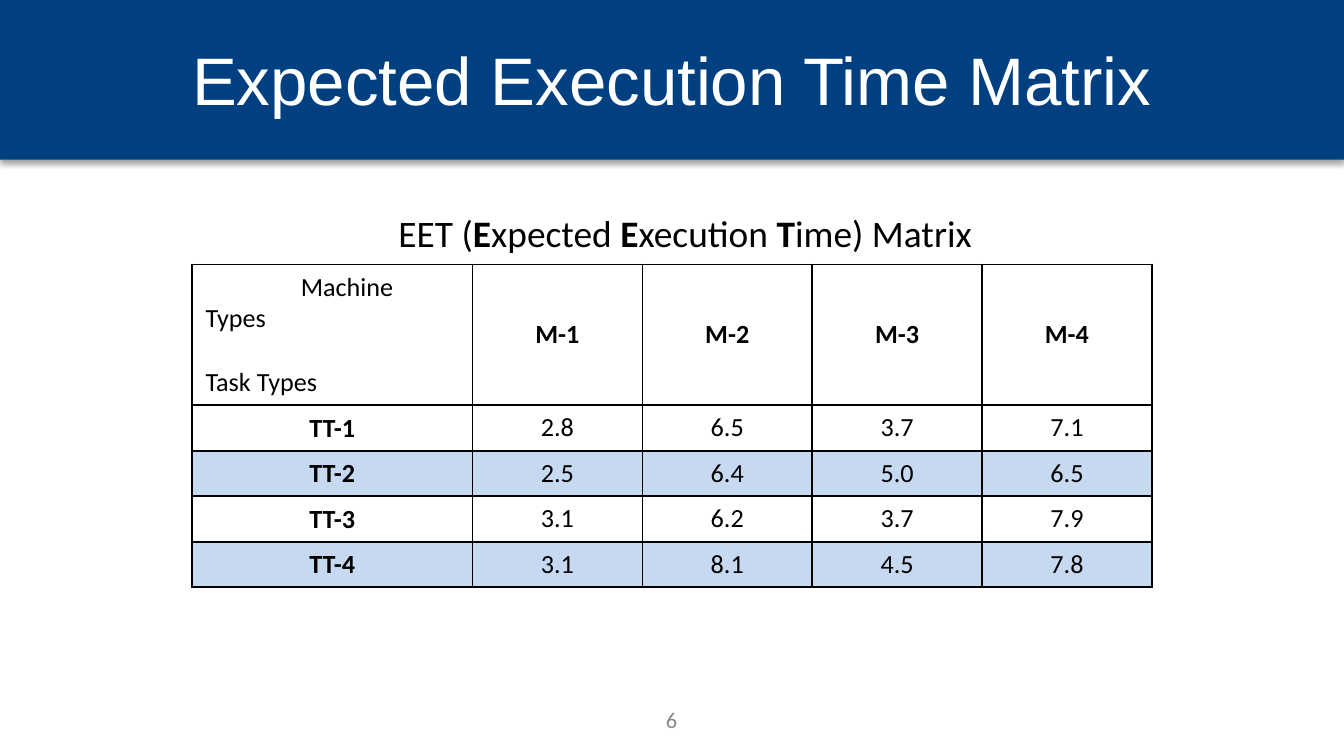
"""Build a slide with an expected execution time table."""
from pptx import Presentation
from pptx import oxml, util as u
from pptx.dml.color import RGBColor
from pptx.enum import shapes, text
from pptx.oxml import ns

COLORS = {
    "header": "004080",
    "title": "FFFFFF",
    "ink": "000000",
    "number": "888888",
    "band": "C6D9F1",
}
MACHINES = ["M-1", "M-2", "M-3", "M-4"]
TASKS = {
    "TT-1": ["2.8", "6.5", "3.7", "7.1"],
    "TT-2": ["2.5", "6.4", "5.0", "6.5"],
    "TT-3": ["3.1", "6.2", "3.7", "7.9"],
    "TT-4": ["3.1", "8.1", "4.5", "7.8"],
}
CENTER = text.PP_ALIGN.CENTER
MIDDLE = text.MSO_ANCHOR.MIDDLE


class SlideBuilder:
    """Hold the style and the current slide."""

    def __init__(self, slide, colors):
        self.slide = slide
        self.colors = colors
        self.formats = {
            "title": {"name": "Arial", "size": u.Pt(36)},
            "caption": {"name": "Calibri", "size": u.Pt(20)},
            "number": {"name": "Calibri", "size": u.Pt(12)},
            "cell": {"name": "Calibri", "size": u.Pt(14)},
        }

    def rgb(self, color):
        return RGBColor.from_string(self.colors[color])

    def add_runs(self, paragraph, runs, style, color="ink", align=CENTER):
        paragraph.alignment = align
        for content, bold in runs:
            run = paragraph.add_run()
            run.text = content
            for name, value in {**self.formats[style], "bold": bold}.items():
                setattr(run.font, name, value)
            run.font.color.rgb = self.rgb(color)

    def place(self, shape, box):
        for name, value in zip(("left", "top", "width", "height"), box):
            setattr(shape, name, u.Cm(value))

    def bar(self, box):
        shape = self.slide.shapes.add_shape(
            shapes.MSO_SHAPE.RECTANGLE, *map(u.Cm, box))
        shape.fill.solid()
        shape.fill.fore_color.rgb = self.rgb("header")
        shape.line.fill.background()
        shape._element.spPr.append(oxml.parse_xml(
            f'<a:effectLst {ns.nsdecls("a")}>'
            f'<a:outerShdw blurRad="{u.Pt(3.1)}" dist="{u.Pt(1.6)}" '
            'dir="5400000" rotWithShape="0">'
            f'<a:srgbClr val="{self.colors["ink"]}"><a:alpha val="38000"/>'
            '</a:srgbClr></a:outerShdw></a:effectLst>'))

    def title(self, content, box):
        shape = self.slide.shapes.title
        self.place(shape, box)
        self.slide.shapes._spTree.append(shape._element)
        shape.text_frame.vertical_anchor = MIDDLE
        self.add_runs(shape.text_frame.paragraphs[0], [(content, False)],
                      "title", "title")

    def text(self, runs, box, style, color="ink", anchor=text.MSO_ANCHOR.TOP):
        frame = self.slide.shapes.add_textbox(*map(u.Cm, box)).text_frame
        frame.word_wrap = True
        frame.vertical_anchor = anchor
        self.add_runs(frame.paragraphs[0], runs, style, color)

    def borders(self, cell):
        properties = cell._tc.get_or_add_tcPr()
        for side in "LRTB":
            properties.append(oxml.parse_xml(
                f'<a:ln{side} {ns.nsdecls("a")} w="{u.Pt(1)}"><a:solidFill>'
                f'<a:srgbClr val="{self.colors["ink"]}"/></a:solidFill>'
                f'</a:ln{side}>'))

    def corner(self, cell, top_label, bottom_label):
        cell.margin_right = u.Cm(0.6)
        first = cell.text_frame.paragraphs[0]
        first._p.get_or_add_pPr().set("indent", str(u.Cm(1.8)))
        second = cell.text_frame.add_paragraph()
        second.space_before = u.Pt(17)
        for paragraph, label in ((first, top_label), (second, bottom_label)):
            self.add_runs(paragraph, [(label, False)], "cell",
                          align=text.PP_ALIGN.LEFT)

    def table(self, rows, left, top, widths, heights):
        table = self.slide.shapes.add_table(
            len(heights), len(widths), u.Cm(left), u.Cm(top),
            u.Cm(sum(widths)), u.Cm(sum(heights))).table
        table.first_row = table.horz_banding = False
        for column, width in zip(table.columns, widths):
            column.width = u.Cm(width)
        for row, height in zip(table.rows, heights):
            row.height = u.Cm(height)
        for i, row in enumerate(rows):
            for j, content in enumerate(row):
                cell = table.cell(i, j)
                self.borders(cell)
                if i and i % 2 == 0:
                    cell.fill.solid()
                    cell.fill.fore_color.rgb = self.rgb("band")
                else:
                    cell.fill.background()
                if i == j == 0:
                    self.corner(cell, *content)
                    continue
                cell.vertical_anchor = MIDDLE if j else text.MSO_ANCHOR.BOTTOM
                self.add_runs(cell.text_frame.paragraphs[0],
                              [(content, i == 0 or j == 0)], "cell")


def main():
    presentation = Presentation()
    presentation.slide_width = u.Cm(25.4)
    presentation.slide_height = u.Cm(14.29)
    slide = presentation.slides.add_slide(presentation.slide_layouts[5])
    builder = SlideBuilder(slide, COLORS)
    builder.bar((0, 0, 25.4, 3.02))
    builder.title("Expected Execution Time Matrix", (1.27, 0.3, 22.86, 2.39))
    builder.text([("6", False)], (9.73, 13.23, 5.92, 0.76),
                 "number", "number", MIDDLE)
    rows = [[("Machine Types", "Task Types"), *MACHINES]]
    rows += [[task, *times] for task, times in TASKS.items()]
    builder.table(rows, 3.63, 5, [5.3] + [3.21] * len(MACHINES),
                  [2.66] + [0.86] * len(TASKS))
    caption = ["EET (", "E", "xpected ", "E", "xecution ", "T", "ime) Matrix"]
    builder.text([(part, len(part) == 1) for part in caption],
                 (7.21, 3.84, 11.48, 1.12), "caption")
    presentation.save("out.pptx")


if __name__ == "__main__":
    main()
